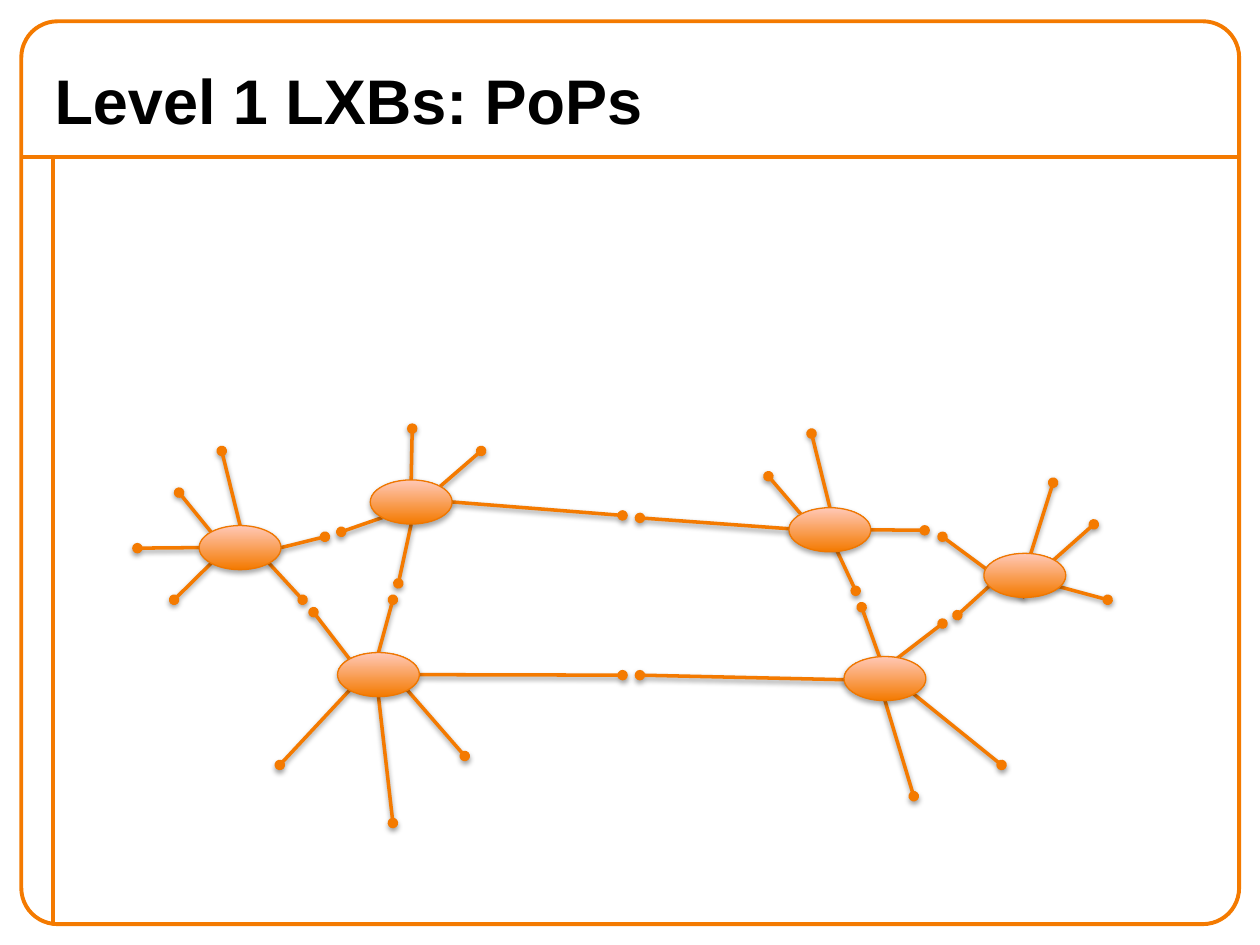
from lxml.etree import SubElement
from pptx import Presentation
from pptx.dml.color import RGBColor as RGB
from pptx.enum.shapes import MSO_CONNECTOR as Line, MSO_SHAPE as Shape
from pptx.enum.text import MSO_ANCHOR as Anchor
from pptx.oxml.ns import qn
from pptx.util import Cm, Pt

# Content: each PoP has a centre and links, all in cm.
# A link starts at a compass site or at an offset from the centre.
TITLE = "Level 1 LXBs: PoPs"
POPS = [
    ((17.84, 13.68), [((-0.01, 0.04), (12.9, 13.61)), ((0.06, 0.04), (17.37, 12.24)),
                      ("SE", (20.19, 15.42)), ("S", (18.42, 16.05)),
                      ((-0.04, -0.19), (19, 12.57))]),
    ((4.84, 11.04), [("NW", (3.61, 9.93)), ("N", (4.47, 9.09)), ("E", (6.55, 10.82)),
                     ("W", (2.77, 11.05)), ("SW", (3.51, 12.09)), ("SE", (6.1, 12.09))]),
    ((8.29, 10.12), [("NE", (9.7, 9.09)), ("N", (8.31, 8.64)), ("E", (12.55, 10.39)),
                     ("SW", (6.88, 10.72)), ("S", (8.03, 11.76))]),
    ((7.63, 13.6), [("NW", (6.32, 12.34)), ("E", (12.55, 13.61)), ("SW", (5.64, 15.42)),
                    ("SE", (9.37, 15.24)), ("S", (7.92, 16.59)), ("N", (7.92, 12.09))]),
    ((16.73, 10.68), [("NW", (15.49, 9.6)), ("N", (16.36, 8.74)), ("E", (18.64, 10.69)),
                      ((-0.39, 0.01), (12.9, 10.44)), ((0.01, 0.14), (17.25, 11.91))]),
    ((20.66, 11.6), [("NE", (22.05, 10.57)), ((0.04, -0.19), (21.23, 9.73)),
                     ((0.37, 0.14), (22.33, 12.09)), ((-0.47, -0.01), (19.3, 12.4)),
                     ("S", (19, 10.82))]),
]

THEME = {
    "accent": RGB.from_string("F47A00"), "light": RGB.from_string("FFC8B7"),
    "edge": RGB.from_string("EF7700"), "text": RGB.from_string("000000"),
    "font": "Arial", "title": Pt(36),
    "frame": Pt(2.25), "link": Pt(2), "outline": Pt(0.75),
}

# Geometry in cm
POP_W, POP_H = 1.65, 0.89
LEFT, TOP, RIGHT, BOTTOM = 0.43, 0.43, 24.98, 18.63
RULE_Y, RULE_X = 3.17, 1.07
DIAG = 0.5 ** 0.5
SITES = {"N": (0, -1), "S": (0, 1), "E": (1, 0), "W": (-1, 0),
         "NE": (DIAG, -DIAG), "NW": (-DIAG, -DIAG),
         "SE": (DIAG, DIAG), "SW": (-DIAG, DIAG)}


def set_effects(s, alpha=None, dist=None):
    """Give a finished shape a downward shadow, or none at all."""
    effects = SubElement(s.element.spPr, qn("a:effectLst"))
    if alpha:
        shadow = SubElement(effects, qn("a:outerShdw"), blurRad=str(Pt(3.1)),
                            dist=str(Pt(dist)), dir="5400000", rotWithShape="0")
        color = SubElement(shadow, qn("a:srgbClr"), val="000000")
        SubElement(color, qn("a:alpha"), val=str(alpha * 1000))


def add_line(slide, start, end, width):
    s = slide.shapes.add_connector(Line.STRAIGHT, *(Cm(v) for v in (*start, *end)))
    s.line.color.rgb = THEME["accent"]
    s.line.width = width
    return s


def add_link(slide, start, end):
    s = add_line(slide, start, end, THEME["link"])
    SubElement(s.element.spPr.find(qn("a:ln")), qn("a:tailEnd"), type="oval")
    set_effects(s, 38, 1.6)


def add_pop(slide, center, links):
    cx, cy = center
    for site, end in links:
        if site in SITES:
            ux, uy = SITES[site]
            dx, dy = ux * POP_W / 2, uy * POP_H / 2
        else:
            dx, dy = site
        add_link(slide, (cx + dx, cy + dy), end)
    s = slide.shapes.add_shape(Shape.OVAL, Cm(cx - POP_W / 2), Cm(cy - POP_H / 2),
                               Cm(POP_W), Cm(POP_H))
    s.fill.gradient()
    s.fill.gradient_angle = 90
    for stop, name in zip(s.fill.gradient_stops, ("accent", "light")):
        stop.color.rgb = THEME[name]
    s.line.color.rgb = THEME["edge"]
    s.line.width = THEME["outline"]
    set_effects(s, 35, 1.8)


def add_frame(slide):
    for start, end in [((LEFT, RULE_Y), (RIGHT, RULE_Y)),
                       ((RULE_X, RULE_Y), (RULE_X, BOTTOM))]:
        set_effects(add_line(slide, start, end, THEME["frame"]))
    s = slide.shapes.add_shape(Shape.ROUNDED_RECTANGLE, Cm(LEFT), Cm(TOP),
                               Cm(RIGHT - LEFT), Cm(BOTTOM - TOP))
    s.adjustments[0] = 0.04
    s.fill.background()
    s.line.color.rgb = THEME["accent"]
    s.line.width = THEME["frame"]
    s.shadow.inherit = False


def add_title(slide):
    tf = slide.shapes.add_textbox(Cm(0.85), Cm(1.06), Cm(24.55), Cm(1.9)).text_frame
    tf.word_wrap = True
    tf.vertical_anchor = Anchor.MIDDLE
    r = tf.paragraphs[0].add_run()
    r.text = TITLE
    r.font.name, r.font.size, r.font.bold = THEME["font"], THEME["title"], True
    r.font.color.rgb = THEME["text"]


def main():
    prs = Presentation()
    prs.slide_width, prs.slide_height = Cm(25.4), Cm(19.05)
    slide = prs.slides.add_slide(prs.slide_layouts[6])
    # Frame and title
    add_frame(slide)
    add_title(slide)
    # Network
    for center, links in POPS:
        add_pop(slide, center, links)
    prs.save("out.pptx")


if __name__ == "__main__":
    main()
